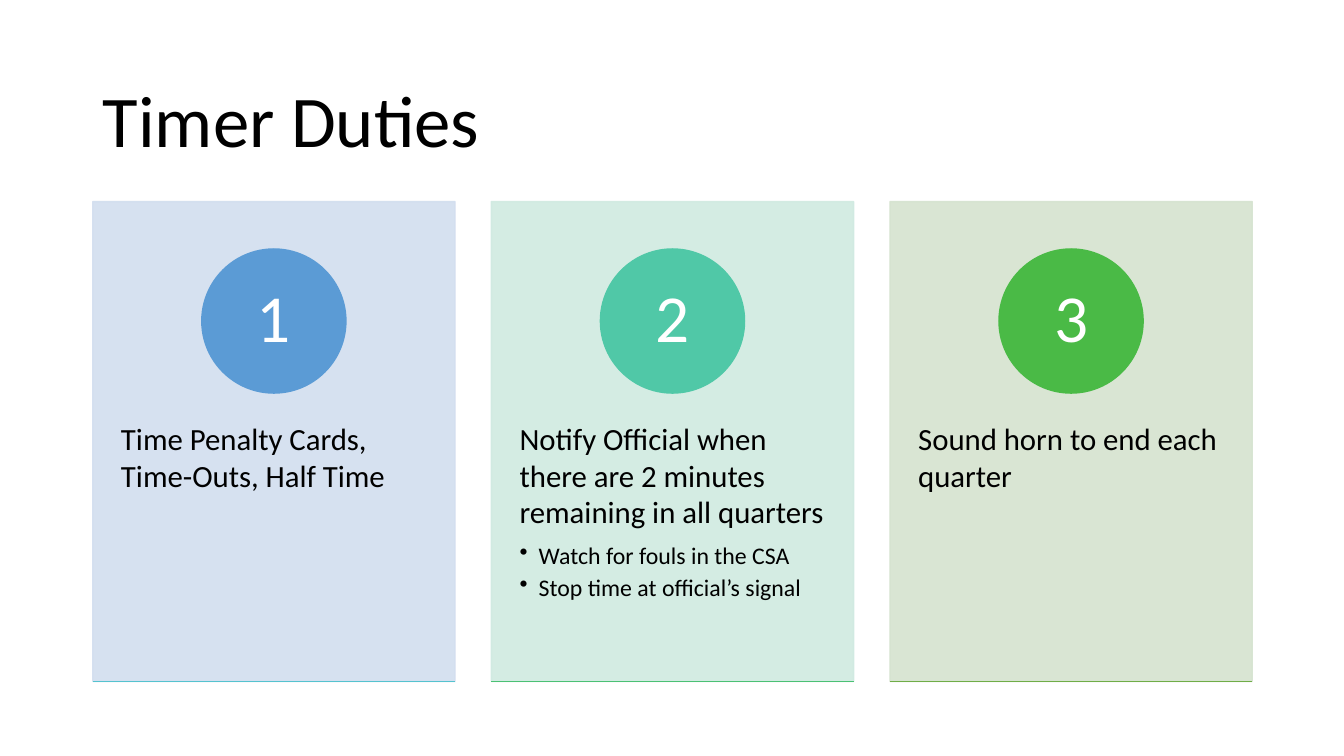
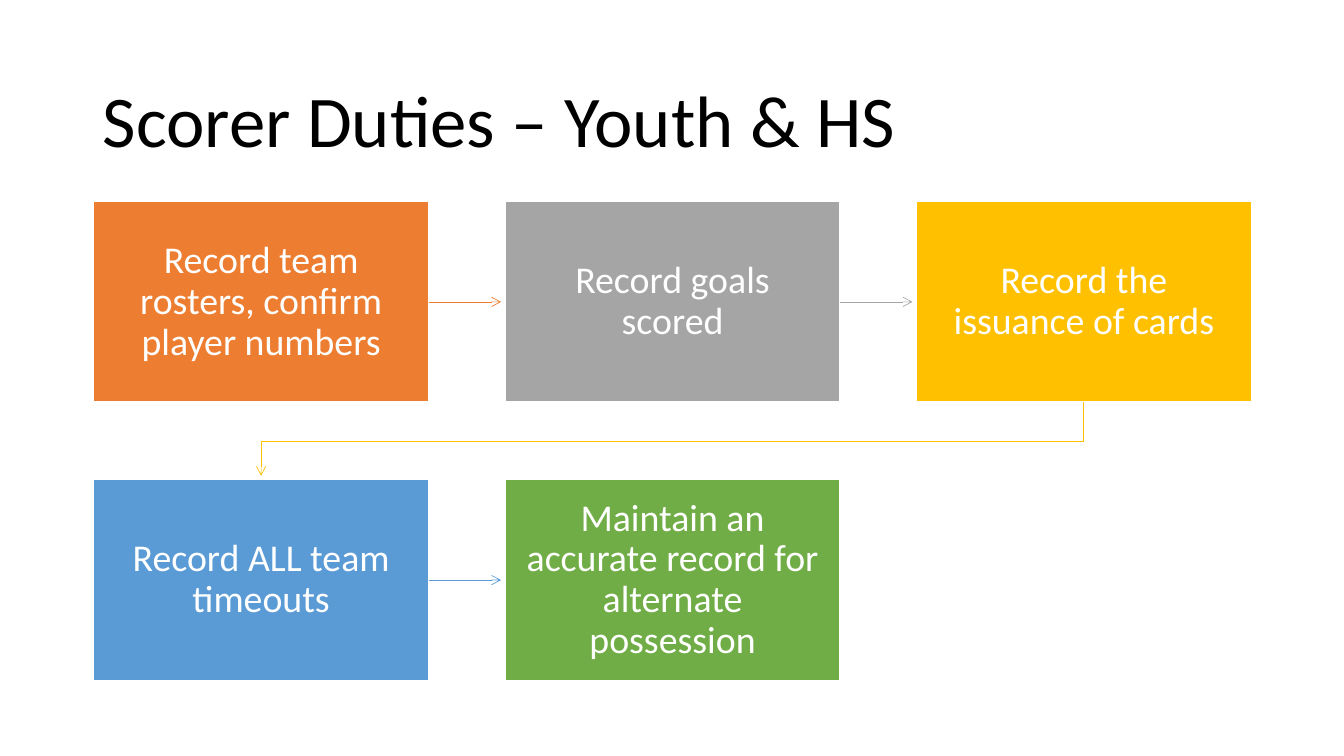
from lxml.etree import SubElement
from pptx import Presentation
from pptx.dml.color import RGBColor
from pptx.enum.shapes import MSO_CONNECTOR, MSO_SHAPE
from pptx.enum.text import MSO_ANCHOR, PP_ALIGN
from pptx.oxml.ns import qn
from pptx.util import Inches, Pt

FONT = "Calibri"
BLACK = RGBColor(0x00, 0x00, 0x00)
WHITE = RGBColor(0xFF, 0xFF, 0xFF)
BLUE = RGBColor(0x5B, 0x9B, 0xD5)
GREEN = RGBColor(0x70, 0xAD, 0x47)
ORANGE = RGBColor(0xED, 0x7D, 0x31)
GRAY = RGBColor(0xA5, 0xA5, 0xA5)
GOLD = RGBColor(0xFF, 0xC0, 0x00)
TEAL = RGBColor(0x50, 0xC8, 0xA7)
LEAF = RGBColor(0x4A, 0xBA, 0x46)
CYAN = RGBColor(0x55, 0xC3, 0xCF)
JADE = RGBColor(0x4B, 0xC1, 0x74)
PALE_BLUE = RGBColor(0xD2, 0xDE, 0xEF)
PALE_TEAL = RGBColor(0xD0, 0xEA, 0xE1)
PALE_LEAF = RGBColor(0xD5, 0xE3, 0xCF)

# Panel, circle and base line colours, number, text, bullets
CARDS = [
    (PALE_BLUE, BLUE, CYAN, "1", "Time Penalty Cards, Time-Outs, Half Time", []),
    (PALE_TEAL, TEAL, JADE, "2",
     "Notify Official when there are 2 minutes remaining in all quarters",
     ["Watch for fouls in the CSA", "Stop time at official’s signal"]),
    (PALE_LEAF, LEAF, GREEN, "3", "Sound horn to end each quarter", []),
]
STEPS = [
    (ORANGE, "Record team rosters, confirm player numbers"),
    (GRAY, "Record goals scored"),
    (GOLD, "Record the issuance of cards"),
    (BLUE, "Record ALL team timeouts"),
    (GREEN, "Maintain an accurate record for alternate possession"),
]


def add_run(para, text, size, color):
    run = para.add_run()
    run.text = text
    run.font.name = FONT
    run.font.size = Pt(size)
    run.font.color.rgb = color


def set_frame(frame, side, top, anchor):
    frame.word_wrap = True
    frame.margin_left = frame.margin_right = Inches(side)
    frame.margin_top = frame.margin_bottom = Inches(top)
    frame.vertical_anchor = anchor


def add_block(slide, kind, x, y, w, h, fill, edge):
    block = slide.shapes.add_shape(kind, Inches(x), Inches(y), Inches(w), Inches(h))
    block.shadow.inherit = False
    block.fill.solid()
    block.fill.fore_color.rgb = fill
    block.line.color.rgb = edge
    block.line.width = Pt(1)
    return block


def add_label(block, text, size, side, top):
    """Centred white text inside a block."""
    set_frame(block.text_frame, side, top, MSO_ANCHOR.MIDDLE)
    para = block.text_frame.paragraphs[0]
    para.alignment = PP_ALIGN.CENTER
    para.line_spacing = 0.9
    add_run(para, text, size, WHITE)


def add_line(slide, x1, y1, x2, y2, color, width):
    line = slide.shapes.add_connector(
        MSO_CONNECTOR.STRAIGHT, Inches(x1), Inches(y1), Inches(x2), Inches(y2))
    line.line.color.rgb = color
    line.line.width = Pt(width)
    SubElement(line.element.spPr, qn("a:effectLst"))
    return line


def add_head(line):
    SubElement(line.element.spPr.find(qn("a:ln")), qn("a:tailEnd"), type="arrow")


def set_alpha(shape, percent):
    for color in shape.element.spPr.iter(qn("a:srgbClr")):
        SubElement(color, qn("a:alpha"), val=str(percent * 1000))


def add_slide(deck, title):
    slide = deck.slides.add_slide(deck.slide_layouts[5])
    head = slide.shapes.title
    head.left, head.top = Inches(0.92), Inches(0.61)
    head.width, head.height = Inches(11.5), Inches(1.24)
    set_frame(head.text_frame, 0.1, 0.05, MSO_ANCHOR.MIDDLE)
    para = head.text_frame.paragraphs[0]
    para.alignment = PP_ALIGN.LEFT
    para.line_spacing = 0.9
    add_run(para, title, 52, BLACK)
    return slide


def add_bullet(frame, text):
    para = frame.add_paragraph()
    para.level = 1
    para.space_after = Pt(2.5)
    add_run(para, text, 17, BLACK)
    props = para._p.get_or_add_pPr()
    props.set("marL", str(Inches(0.19)))
    props.set("indent", str(-Inches(0.19)))
    SubElement(props, qn("a:buChar"), char="•")


def add_card(slide, x, y, w, h, card):
    pale, tint, base, number, text, bullets = card
    # Panel and its base line
    panel = add_block(slide, MSO_SHAPE.RECTANGLE, x, y, w, h, pale, pale)
    set_alpha(panel, 90)
    add_line(slide, x, y + h, x + w, y + h, base, 1)
    # Numbered circle
    size = 1.43
    disc = add_block(slide, MSO_SHAPE.OVAL, x + (w - size) / 2, y + 0.47,
                     size, size, tint, tint)
    add_label(disc, number, 48, 0.11, 0.01)
    # Text
    box = slide.shapes.add_textbox(
        Inches(x), Inches(y + 1.8), Inches(w), Inches(h - 1.9))
    frame = box.text_frame
    set_frame(frame, 0.28, 0.36, MSO_ANCHOR.TOP)
    para = frame.paragraphs[0]
    para.space_after = Pt(7.7)
    add_run(para, text, 22, BLACK)
    for bullet in bullets:
        add_bullet(frame, bullet)


def add_cards(slide, x, y, w, h, gap=0.36):
    wide = (w - gap * (len(CARDS) - 1)) / len(CARDS)
    for i, card in enumerate(CARDS):
        add_card(slide, x + i * (wide + gap), y, wide, h, card)


def add_turn(slide, x1, y1, x2, y2, color):
    """Bent arrow from the end of one row to the start of the next."""
    mid = y1 + 0.39
    path = slide.shapes.build_freeform(Inches(x1), Inches(y1))
    path.add_line_segments(
        [(Inches(a), Inches(b)) for a, b in ((x1, mid), (x2, mid), (x2, y2))],
        close=False)
    turn = path.convert_to_shape()
    turn.shadow.inherit = False
    turn.fill.background()
    turn.line.color.rgb = color
    turn.line.width = Pt(0.5)
    add_head(turn)


def add_flow(slide, x, y, w, h, cols=3):
    wide, high, gap = 3.32, 1.99, 0.04
    step_x, step_y = (w - wide) / (cols - 1), h - high
    for i, (color, text) in enumerate(STEPS):
        row, col = divmod(i, cols)
        left, top = x + col * step_x, y + row * step_y
        box = add_block(slide, MSO_SHAPE.RECTANGLE, left, top, wide, high,
                        color, WHITE)
        add_label(box, text, 27, 0.16, 0.17)
        if i == len(STEPS) - 1:
            break
        # Arrow to the next step
        if col < cols - 1:
            mid = top + high / 2
            arrow = add_line(slide, left + wide, mid, left + step_x - gap, mid,
                             color, 0.5)
            arrow.begin_connect(box, 3)
            add_head(arrow)
        else:
            add_turn(slide, left + wide / 2, top + high,
                     x + wide / 2, top + step_y - gap, color)


def main():
    deck = Presentation()
    deck.slide_width, deck.slide_height = Inches(13.33), Inches(7.5)
    add_cards(add_slide(deck, "Timer Duties"), 0.92, 2, 11.5, 4.76)
    add_flow(add_slide(deck, "Scorer Duties – Youth & HS"), 0.93, 2, 11.48, 4.75)
    deck.save("out.pptx")


if __name__ == "__main__":
    main()
